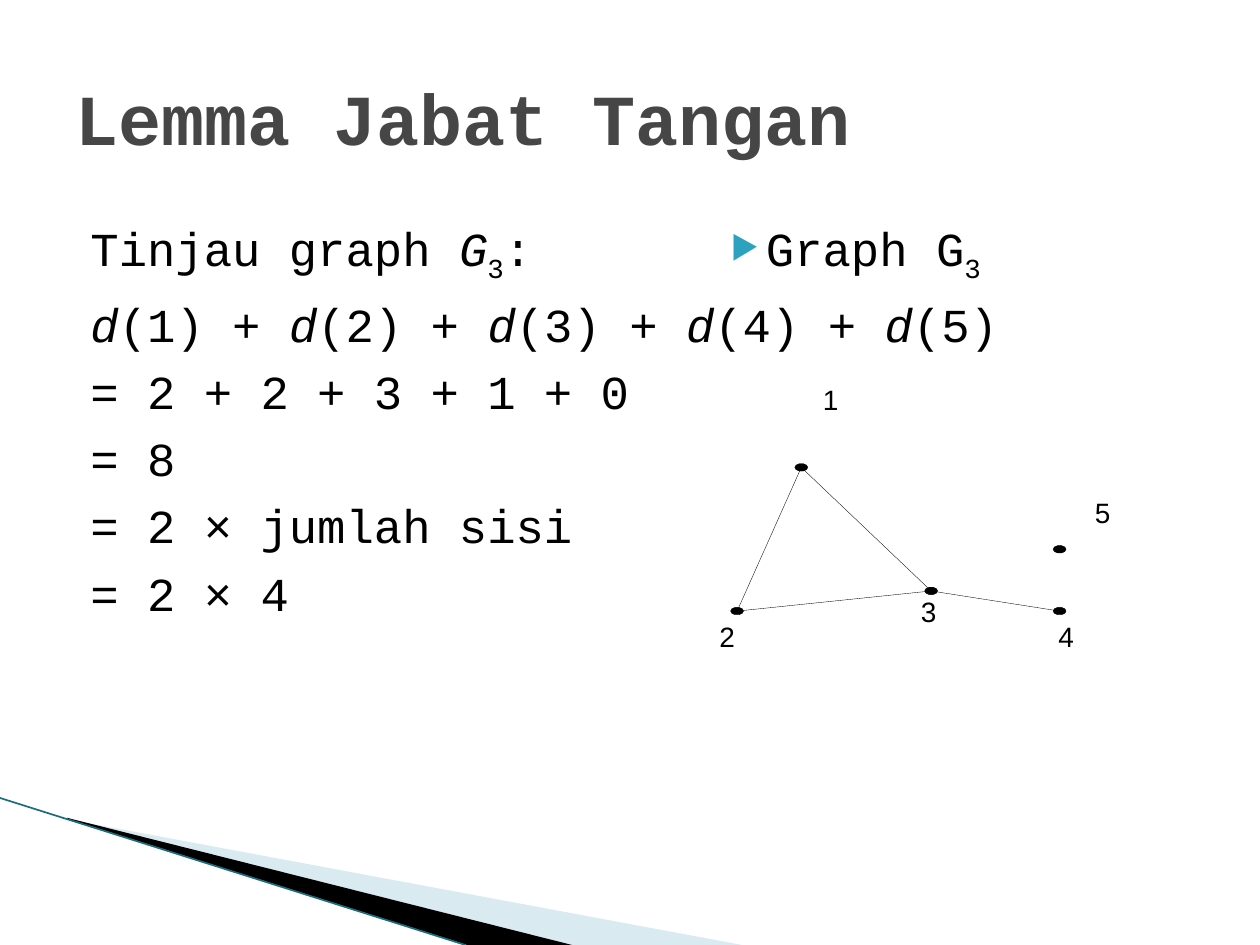
from math import cos, pi, sin

from lxml import etree
from pptx import Presentation
from pptx.dml.color import RGBColor
from pptx.enum.shapes import MSO_CONNECTOR
from pptx.enum.text import MSO_ANCHOR, MSO_AUTO_SIZE, PP_ALIGN
from pptx.oxml.ns import qn
from pptx.util import Pt

LINE = MSO_CONNECTOR.STRAIGHT
LEFT, MIDDLE = PP_ALIGN.LEFT, MSO_ANCHOR.MIDDLE
NO_FIT = MSO_AUTO_SIZE.NONE
COLORS = {"ink": "000000", "title": "464646", "bullet": "2DA2BF",
          "wedge": "A0CBDC", "edge": "1B6C80"}
MONO, SANS = "Courier New", "Arial"


def color(name):
    return RGBColor.from_string(COLORS[name])


class Deck:
    """Holds the style and the current slide; lengths are in points."""

    def __init__(self):
        self.prs = Presentation()
        self.prs.slide_width, self.prs.slide_height = Pt(720), Pt(540)
        self.slide = self.prs.slides.add_slide(self.prs.slide_layouts[5])
        self.shapes = self.slide.shapes

    def font(self, para, size, face, name="ink", bold=False):
        font = para.font
        font.size, font.name, font.bold = Pt(size), face, bold
        font.color.rgb = color(name)

    def title(self, text, *box):
        shape = self.shapes.title
        shape.left, shape.top, shape.width, shape.height = map(Pt, box)
        frame = shape.text_frame
        frame.text = text
        frame.auto_size, frame.vertical_anchor = NO_FIT, MIDDLE
        frame.paragraphs[0].alignment = LEFT
        self.font(frame.paragraphs[0], 41, MONO, "title", True)

    def body(self, lines, *box, bullet=None):
        """Each line is a list of (text, style); style is "", "i" or "sub"."""
        frame = self.shapes.add_textbox(*map(Pt, box)).text_frame
        frame.word_wrap = True
        for i, runs in enumerate(lines):
            para = frame.add_paragraph() if i else frame.paragraphs[0]
            props = para._p.get_or_add_pPr()
            props.set("marL", str(Pt(28.8)))
            props.set("indent", str(Pt(-20.16)))
            if bullet:
                tint = etree.SubElement(props, qn("a:buClr"))
                etree.SubElement(tint, qn("a:srgbClr"), val=COLORS["bullet"])
                etree.SubElement(props, qn("a:buSzPct"), val="68000")
                etree.SubElement(props, qn("a:buChar"), char=bullet)
            else:
                etree.SubElement(props, qn("a:buNone"))
            if i:
                para.space_before = Pt(6)
            self.font(para, 27, MONO)
            for text, style in runs:
                run = para.add_run()
                run.text = text
                if style == "i":
                    run.font.italic = True
                elif style == "sub":
                    run.font._element.set("baseline", "-25000")

    def label(self, text, x, y):
        frame = self.shapes.add_textbox(Pt(x), Pt(y), Pt(9), Pt(19.4)).text_frame
        frame.margin_left = frame.margin_right = 0
        frame.margin_top = frame.margin_bottom = 0
        frame.word_wrap = False
        frame.text = text
        self.font(frame.paragraphs[0], 16, SANS)

    def outline(self, points, fill, alpha=None, border=None):
        dots = [(Pt(x), Pt(y)) for x, y in points]
        pen = self.shapes.build_freeform(*dots[0], scale=1.0)
        pen.add_line_segments(dots[1:], close=True)
        shape = pen.convert_to_shape()
        shape.shadow.inherit = False
        shape.fill.solid()
        shape.fill.fore_color.rgb = color(fill)
        if alpha:
            tint = shape.fill._xPr.find(".//" + qn("a:srgbClr"))
            etree.SubElement(tint, qn("a:alpha"), val=str(alpha * 1000))
        if border:
            shape.line.color.rgb, shape.line.width = color(fill), Pt(border)
        else:
            shape.line.fill.background()

    def line(self, start, end, name, width):
        link = self.shapes.add_connector(LINE, *map(Pt, (*start, *end)))
        link.line.color.rgb, link.line.width = color(name), Pt(width)
        etree.SubElement(link._element.spPr, qn("a:effectLst"))

    def node(self, x, y):
        turns = [k * pi / 5 for k in range(10)]
        self.outline([(x + 3.7 * cos(t), y + 2.2 * sin(t)) for t in turns],
                     "ink", border=0.2)


def main():
    deck = Deck()

    # Corner wedges
    deck.outline([(39.6, 468.4), (424, 540), (327, 540), (39.6, 468)],
                 "wedge", alpha=40)
    deck.outline([(38.2, 467.3), (327, 540), (267, 540), (38.9, 468)], "ink")
    deck.line((0, 456), (266, 540), "edge", 0.95)

    # Title and text
    deck.title("Lemma Jabat Tangan", 36, 21.6, 648, 90)
    terms = []
    for n in range(1, 6):
        terms += [("d", "i"), (f"({n})" + (" + " if n < 5 else ""), "")]
    steps = ["= 2 + 2 + 3 + 1 + 0", "= 8", "= 2 × jumlah sisi", "= 2 × 4"]
    deck.body([[("Tinjau graph ", ""), ("G", "i"), ("3", "sub"), (":", "")],
               terms] + [[(step, "")] for step in steps],
              36, 122, 648, 351)
    deck.body([[("Graph G", ""), ("3", "sub")]],
              401.8, 122, 318.2, 351, bullet="▶")

    # Graph: node centre and label corner
    nodes = {1: ((457.9, 267.1), (470.2, 218.9)),
             2: ((421.2, 349.2), (411.1, 354.2)),
             3: ((532.1, 337.7), (526.3, 339.8)),
             4: ((605.5, 349.2), (604.8, 354.2)),
             5: ((605.5, 313.9), (625.7, 283))}
    for spot, _ in nodes.values():
        deck.node(*spot)
    for a, b in [(1, 2), (3, 4), (2, 3), (1, 3)]:
        deck.line(nodes[a][0], nodes[b][0], "ink", 0.2)
    for n, (_, corner) in nodes.items():
        deck.label(str(n), *corner)

    deck.prs.save("out.pptx")


if __name__ == "__main__":
    main()
